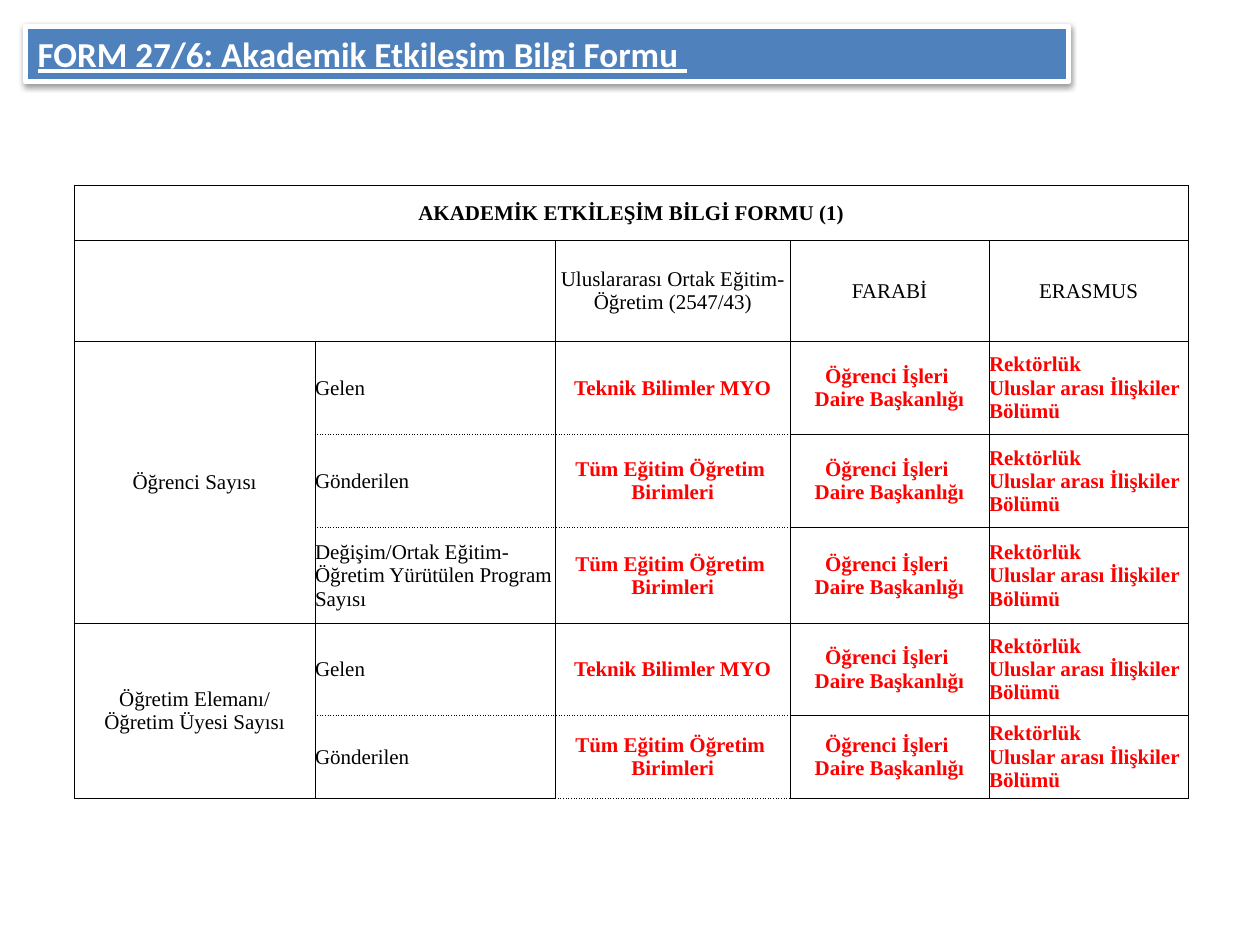
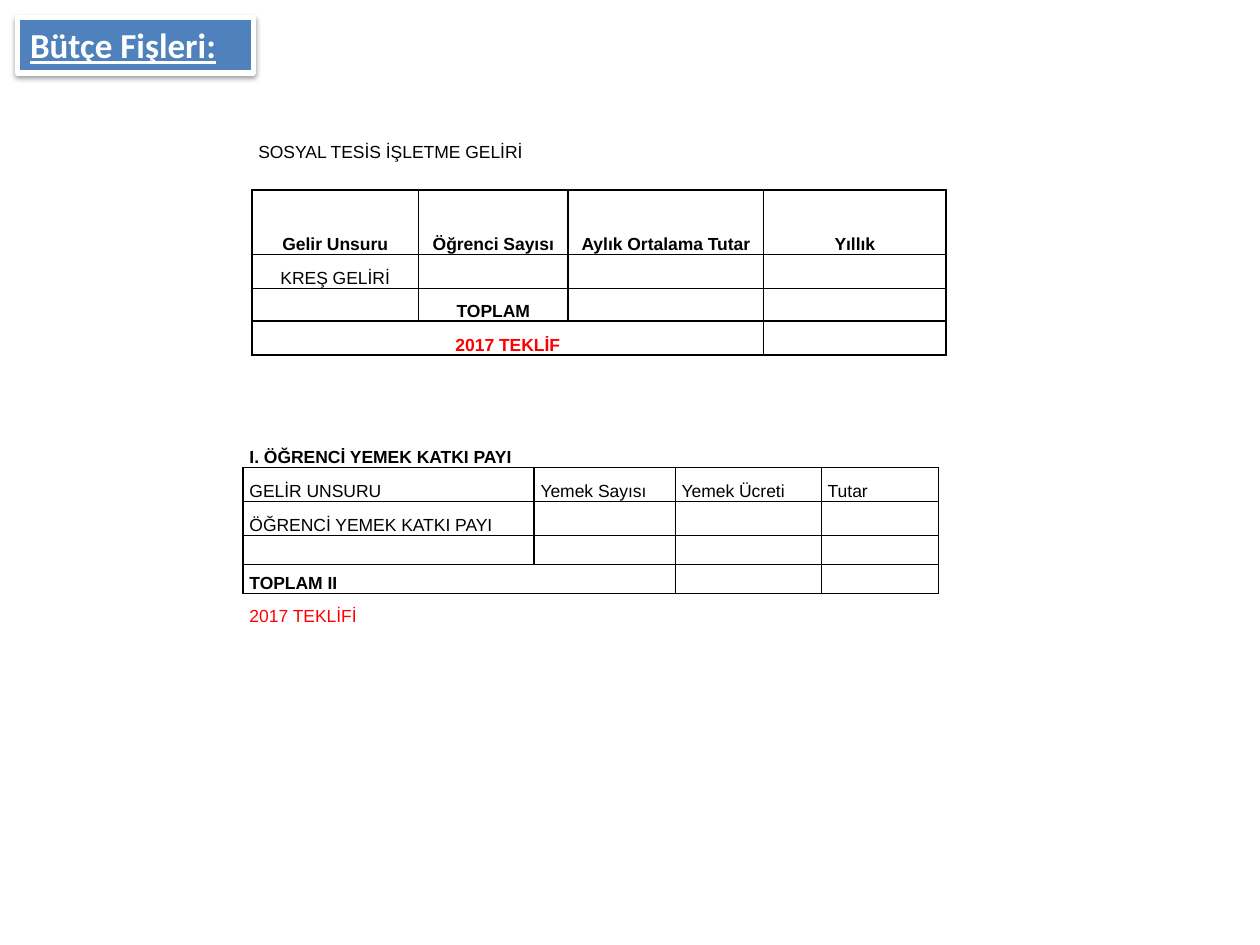
from lxml import etree
from pptx import Presentation
from pptx.dml.color import RGBColor
from pptx.enum.shapes import MSO_SHAPE
from pptx.enum.text import MSO_ANCHOR, PP_ALIGN
from pptx.oxml.ns import qn
from pptx.util import Inches, Pt

RECT = MSO_SHAPE.RECTANGLE
TOP, MIDDLE, BOTTOM = MSO_ANCHOR.TOP, MSO_ANCHOR.MIDDLE, MSO_ANCHOR.BOTTOM
LEFT, CENTER = PP_ALIGN.LEFT, PP_ALIGN.CENTER
COLORS = {"band": "4F81BD", "white": "FFFFFF", "black": "000000", "red": "FF0000"}


def write(tf, text, font="Arial", size=10, color="black", bold=False,
          underline=False, align=LEFT, spacing=None):
    p = tf.paragraphs[0]
    p.text = text
    p.alignment = align
    if spacing:
        p.line_spacing = spacing
    for r in p.runs:
        r.font.name = font
        r.font.size = Pt(size)
        r.font.bold = bold
        r.font.underline = underline
        r.font.color.rgb = RGBColor.from_string(COLORS[color])
    # Line breaks and empty cells need the text size too
    for br in p._p.findall(qn("a:br")):
        etree.SubElement(br, qn("a:rPr"), sz=str(size * 100))
    if not text:
        etree.SubElement(p._p, qn("a:endParaRPr"), sz=str(size * 100))


def add_grid(slide, left, top, cols, rows, texts, spans, formats, borders,
             width, inset, anchor, **base):
    """Borders maps a cell to its sides (L, R, T, B), each "solid" or "sysDot"."""
    frame = slide.shapes.add_table(len(rows), len(cols), Inches(left), Inches(top),
                                   Inches(sum(cols)), Inches(sum(rows)))
    table = frame.table
    table.first_row = table.horz_banding = False
    for col, w in zip(table.columns, cols):
        col.width = Inches(w)
    for row, h in zip(table.rows, rows):
        row.height = Inches(h)
    for r in range(len(rows)):
        for c in range(len(cols)):
            cell = table.cell(r, c)
            cell.margin_left = cell.margin_right = Inches(inset)
            cell.margin_top = cell.margin_bottom = 0
            cell.vertical_anchor = anchor
            cell.fill.background()
            write(cell.text_frame, texts.get((r, c), ""),
                  **{**base, **formats.get((r, c), {})})
            sides = borders.get((r, c), dict.fromkeys("LRTB", "solid"))
            tcPr = cell._tc.get_or_add_tcPr()
            for i, side in enumerate("LRTB"):
                ln = etree.Element(qn(f"a:ln{side}"), w=str(int(Pt(width))))
                tcPr.insert(i, ln)
                if side in sides:
                    fill = etree.SubElement(ln, qn("a:solidFill"))
                    etree.SubElement(fill, qn("a:srgbClr"), val=COLORS["black"])
                    etree.SubElement(ln, qn("a:prstDash"), val=sides[side])
                else:
                    etree.SubElement(ln, qn("a:noFill"))
    for first, last in spans:
        table.cell(*first).merge(table.cell(*last))


prs = Presentation()
prs.slide_width, prs.slide_height = Inches(10), Inches(7.5)
form, budget = [prs.slides.add_slide(prs.slide_layouts[6]) for _ in range(2)]

# Academic interaction table: wording
texts = {
    (0, 0): "AKADEMİK ETKİLEŞİM BİLGİ FORMU (1)",
    (1, 2): "Uluslararası Ortak Eğitim-Öğretim (2547/43)",
    (1, 3): "FARABİ",
    (1, 4): "ERASMUS",
    (2, 0): "Öğrenci Sayısı",
    (5, 0): "Öğretim Elemanı/\nÖğretim Üyesi Sayısı",
}
incoming, outgoing = "Gelen", "Gönderilen"
program = "Değişim/Ortak Eğitim-Öğretim Yürütülen Program Sayısı"
formats = {(0, 0): {"bold": True}}
for r, label in enumerate([incoming, outgoing, program, incoming, outgoing], 2):
    texts[r, 1] = label
    texts[r, 2] = ("Teknik Bilimler MYO" if label == incoming
                   else "Tüm Eğitim Öğretim \nBirimleri")
    texts[r, 3] = "Öğrenci İşleri \nDaire Başkanlığı"
    texts[r, 4] = "Rektörlük\nUluslar arası İlişkiler Bölümü"
    formats[r, 1] = {"align": LEFT}
    for c in (2, 3, 4):
        formats[r, c] = {"color": "red", "bold": True,
                         "align": LEFT if c == 4 else CENTER}

# Dotted rules between the rows of each group
borders = {}
for r in range(2, 7):
    for c in (1, 2):
        dotted_top = r in (3, 4, 6)
        dotted_bottom = r in (2, 3, 5) or (r, c) == (6, 2)
        borders[r, c] = {"L": "solid", "R": "solid",
                         "T": "sysDot" if dotted_top else "solid",
                         "B": "sysDot" if dotted_bottom else "solid"}

add_grid(form, 0.59, 1.47, [1.91, 1.91, 1.86, 1.58, 1.58],
         [0.44, 0.8, 0.74, 0.74, 0.76, 0.73, 0.66], texts,
         [((0, 0), (0, 4)), ((1, 0), (1, 1)), ((2, 0), (4, 0)), ((5, 0), (6, 0))],
         formats, borders, 0.5, 0, MIDDLE,
         font="Times New Roman", size=12, align=CENTER)

# Social facility income table
budget_style = {"width": 1, "inset": 0.05, "anchor": BOTTOM, "spacing": 1.15}
bold = {"bold": True}
texts = {
    (0, 0): "SOSYAL TESİS İŞLETME GELİRİ",
    (2, 0): "Gelir Unsuru",
    (2, 1): "Öğrenci Sayısı",
    (2, 2): "Aylık Ortalama Tutar",
    (2, 3): "Yıllık",
    (3, 0): "KREŞ GELİRİ",
    (4, 1): "TOPLAM",
    (5, 0): "2017 TEKLİF",
}
formats = {(2, c): bold for c in range(4)}
formats |= {(0, 0): {"align": LEFT}, (4, 1): bold,
            (5, 0): {"bold": True, "color": "red"}}
borders = {(0, c): {} for c in range(4)}
borders |= {(1, c): {"B": "solid"} for c in range(4)}
add_grid(budget, 2, 1.07, [1.32, 1.19, 1.55, 1.45],
         [0.22, 0.22, 0.51, 0.27, 0.26, 0.27], texts,
         [((0, 0), (0, 2)), ((5, 0), (5, 2))], formats, borders,
         align=CENTER, **budget_style)

# Student meal contribution table
texts = {
    (0, 0): "I. ÖĞRENCİ YEMEK KATKI PAYI",
    (1, 0): "GELİR UNSURU",
    (1, 1): "Yemek Sayısı",
    (1, 2): "Yemek Ücreti",
    (1, 3): "Tutar",
    (2, 0): "ÖĞRENCİ YEMEK KATKI PAYI",
    (4, 0): "TOPLAM II",
    (5, 0): "2017 TEKLİFİ",
}
formats = {(0, 0): bold, (4, 0): bold, (5, 0): {"color": "red"}}
borders = {(0, c): {"B": "solid"} for c in range(4)}
borders |= {(5, c): {"T": "solid"} for c in range(4)}
borders |= {(4, 0): dict.fromkeys("LTB", "solid"),
            (4, 1): dict.fromkeys("RTB", "solid")}
add_grid(budget, 1.93, 3.44, [2.31, 1.12, 1.16, 0.93],
         [0.27, 0.27, 0.27, 0.23, 0.23, 0.26], texts, [], formats, borders,
         **budget_style)

# Title bands with a soft shadow
for slide, left, top, width, title in [
    (form, 0.2, 0.21, 8.28, "FORM 27/6: Akademik Etkileşim Bilgi Formu "),
    (budget, 0.14, 0.14, 1.87, "Bütçe Fişleri:"),
]:
    sp = slide.shapes.add_shape(RECT, Inches(left), Inches(top),
                                Inches(width), Inches(0.44))
    sp.fill.solid()
    sp.fill.fore_color.rgb = RGBColor.from_string(COLORS["band"])
    sp.line.color.rgb = RGBColor.from_string(COLORS["white"])
    sp.line.width = Pt(3)
    sp.shadow.inherit = False
    effects = sp._element.spPr.find(qn("a:effectLst"))
    shadow = etree.SubElement(effects, qn("a:outerShdw"), blurRad="40000",
                              dist="20000", dir="5400000", rotWithShape="0")
    shade = etree.SubElement(shadow, qn("a:srgbClr"), val=COLORS["black"])
    etree.SubElement(shade, qn("a:alpha"), val="38000")
    tf = sp.text_frame
    tf.word_wrap = True
    tf.vertical_anchor = TOP
    write(tf, title, font="Calibri", size=20, color="white", bold=True,
          underline=True)

prs.save("out.pptx")
